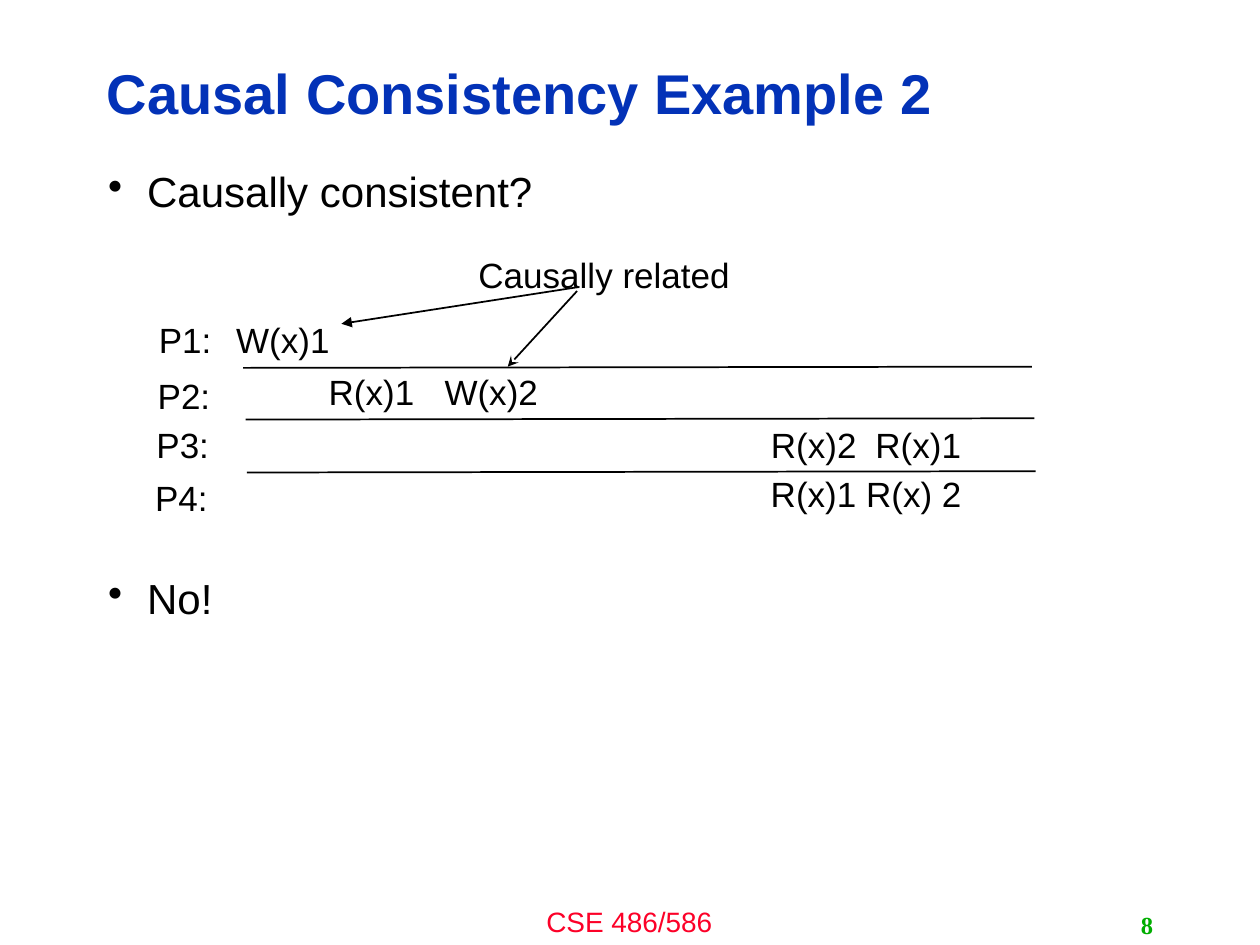
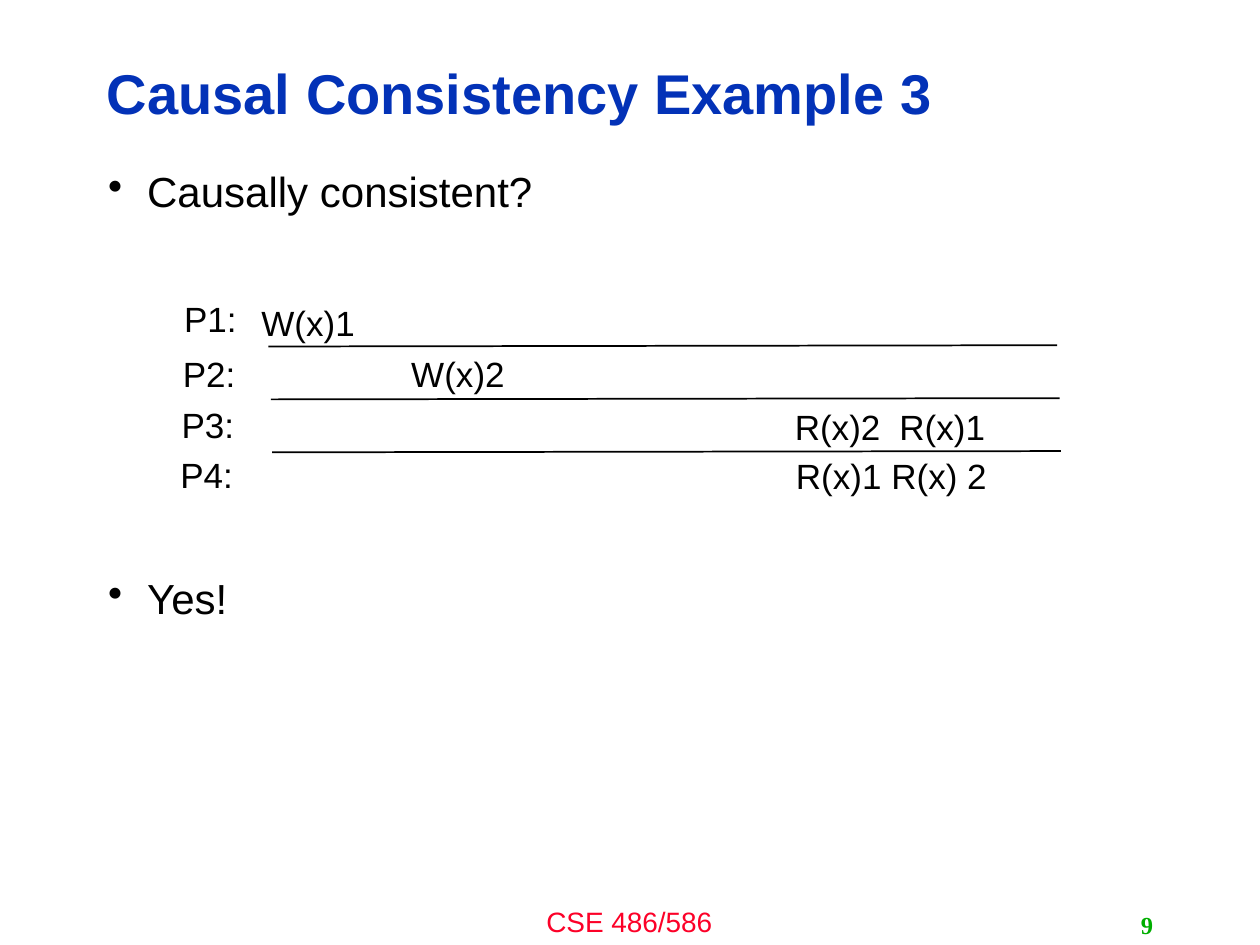
"""Build two slides on causal consistency, each with a timeline of four processes."""
from lxml import etree
from pptx import Presentation
from pptx.dml.color import RGBColor
from pptx.enum.shapes import MSO_CONNECTOR
from pptx.enum.text import MSO_ANCHOR, PP_ALIGN
from pptx.oxml.ns import qn
from pptx.util import Inches, Pt

BLACK = "000000"
TITLE = {"name": "Arial", "size": Pt(32), "bold": True, "color": "0332B7"}
BODY = {"name": "Arial", "size": Pt(24), "color": BLACK}
DIAGRAM = {"name": "Arial", "size": Pt(20), "color": BLACK}
FOOTER = {"name": "Arial", "size": Pt(16), "color": "FC0128"}
NUMBER = {"name": "Times New Roman", "size": Pt(14), "bold": True, "color": "00AE00"}

EXAMPLES = [
    {
        "title": "Causal Consistency Example 2", "answer": "No!", "number": "8",
        "shift": 0, "rules": [2.92, 3.33, 3.75], "processes": [2.48, 2.92, 3.31, 3.73],
        "operations": [
            ("W(x)1", 1.77, 2.48, 0.95, None),
            ("R(x)1\tW(x)2", 2.51, 2.89, 1.87, 0.92),
            ("R(x)2\tR(x)1", 6.02, 3.31, 1.73, 0.83),
            ("R(x)1 R(x) 2", 6.01, 3.7, 1.73, None),
            ("Causally related", 3.69, 1.96, 2.21, None),
        ],
        "arrows": [
            (4.58, 2.28, 2.71, 2.57, "triangle"),
            (4.58, 2.31, 4.03, 2.91, "stealth"),
        ],
    },
    {
        "title": "Causal Consistency Example 3", "answer": "Yes!", "number": "9",
        "shift": 0.2, "rules": [2.75, 3.17, 3.59], "processes": [2.31, 2.75, 3.15, 3.55],
        "operations": [
            ("W(x)1", 1.97, 2.34, 0.95, None),
            ("W(x)2", 3.16, 2.75, 0.95, None),
            ("R(x)2\tR(x)1", 6.21, 3.17, 1.73, 0.83),
            ("R(x)1 R(x) 2", 6.21, 3.56, 1.73, None),
        ],
        "arrows": [],
    },
]


def write(slide, at, lines, style, align=PP_ALIGN.LEFT, anchor=MSO_ANCHOR.TOP, wrap=True):
    """Add a text box with one paragraph per line and return its paragraphs."""
    frame = slide.shapes.add_textbox(*map(Inches, at)).text_frame
    frame.word_wrap = wrap
    frame.vertical_anchor = anchor
    frame.text = "\n".join(lines)
    for paragraph in frame.paragraphs:
        paragraph.alignment = align
        font = paragraph.runs[0].font
        for key, value in style.items():
            if key == "color":
                font.color.rgb = RGBColor.from_string(value)
            else:
                setattr(font, key, value)
    return frame.paragraphs


def draw_line(slide, ends, arrowhead=None):
    """Add a thin black line, with an arrowhead at its end if one is named."""
    line = slide.shapes.add_connector(MSO_CONNECTOR.STRAIGHT, *map(Inches, ends))
    line.line.color.rgb = RGBColor.from_string(BLACK)
    line.line.width = Pt(1)
    if arrowhead:
        etree.SubElement(line.line._get_or_add_ln(), qn("a:tailEnd"), type=arrowhead)
    etree.SubElement(line._element.spPr, qn("a:effectLst"))


deck = Presentation()
deck.slide_width, deck.slide_height = Inches(10), Inches(7.5)

for example in EXAMPLES:
    slide = deck.slides.add_slide(deck.slide_layouts[6])
    write(slide, (3.33, 7.13, 3.33, 0.37), ["CSE 486/586"], FOOTER, PP_ALIGN.CENTER)
    heading = write(slide, (0.75, 0.36, 7.98, 0.81), [example["title"]], TITLE,
                    anchor=MSO_ANCHOR.MIDDLE)
    heading[0].line_spacing = 0.9

    bullets = write(slide, (0.76, 1.31, 8.4, 5.39),
                    ["Causally consistent?", example["answer"]], BODY)
    for bullet in bullets:
        bullet.line_spacing = 0.9
        properties = bullet._p.get_or_add_pPr()
        properties.set("marL", str(Inches(0.31)))
        properties.set("indent", str(-Inches(0.31)))
        etree.SubElement(properties, qn("a:buChar"), char="•")
    bullets[1].space_before = Pt(206.5)

    write(slide, (7.17, 7.18, 2.08, 0.32), [example["number"]], NUMBER,
          PP_ALIGN.RIGHT, MSO_ANCHOR.MIDDLE)

    for left, top in zip((1.93, 1.95, 1.96), example["rules"]):
        start = left + example["shift"]
        draw_line(slide, (start, top, start + 6.26, top - 0.01))

    for row, top in enumerate(example["processes"]):
        left = 1.16 + example["shift"] - 0.01 * row
        write(slide, (left, top, 0.62, 0.44), [f"P{row + 1}:"], DIAGRAM,
              PP_ALIGN.CENTER, wrap=False)

    for *ends, arrowhead in example["arrows"]:
        draw_line(slide, ends, arrowhead)

    for operation, left, top, width, tab in example["operations"]:
        align = PP_ALIGN.LEFT if tab else PP_ALIGN.CENTER
        words = write(slide, (left, top, width, 0.44), [operation], DIAGRAM, align,
                      wrap=bool(tab))
        if tab:
            stops = etree.SubElement(words[0]._p.get_or_add_pPr(), qn("a:tabLst"))
            etree.SubElement(stops, qn("a:tab"), pos=str(Inches(tab)), algn="l")

deck.save("out.pptx")
